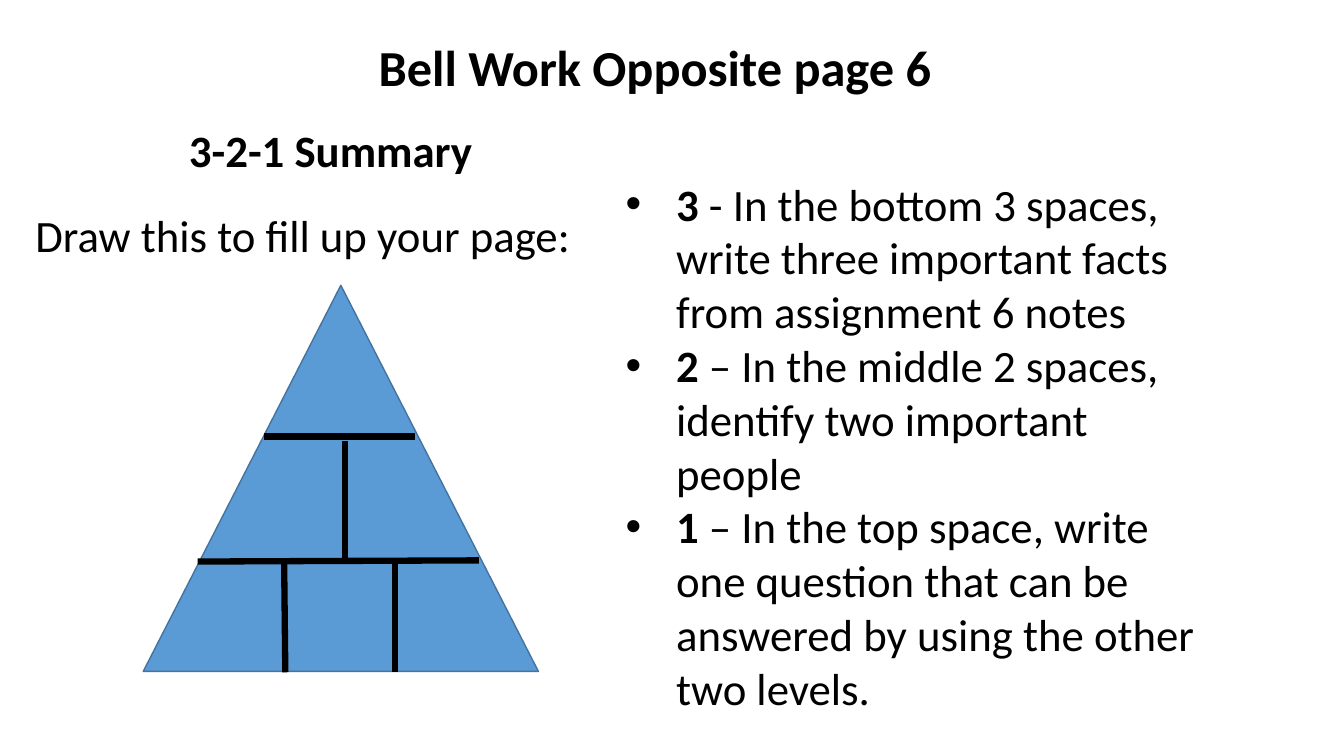
"""Build the Bell Work slide with its 3-2-1 summary pyramid."""
from dataclasses import dataclass

import pptx
import pptx.dml.color
import pptx.enum.shapes
import pptx.enum.text
import pptx.util
from lxml import etree
from pptx.oxml.ns import qn

Cm = pptx.util.Cm
Pt = pptx.util.Pt
Align = pptx.enum.text.PP_ALIGN
Anchor = pptx.enum.text.MSO_ANCHOR


@dataclass(frozen=True)
class Theme:
    """Colours, typeface and sizes of the slide."""
    font: str = "Calibri"
    ink: str = "000000"
    pyramid: str = "5B9BD5"
    outline: str = "43739E"
    title_size: int = 36
    body_size: int = 32
    outline_width: int = 1
    divider_width: float = 4.5


THEME = Theme()

TASKS = [
    ("3", " - In the bottom 3 spaces, write three important facts from assignment 6 notes"),
    ("2", " – In the middle 2 spaces, identify two important people"),
    ("1", " – In the top space, write one question that can be answered by using the other two levels."),
]

DIVIDERS = [
    (6.65, 11, 10.46, 11),
    (8.69, 11.1, 8.69, 14.17),
    (4.98, 14.15, 12.07, 14.12),
    (7.16, 14.12, 7.19, 16.94),
    (9.96, 14.12, 9.96, 16.94),
]


def rgb(value):
    """Turn a hex string into a colour."""
    return pptx.dml.color.RGBColor.from_string(value)


def add_text_frame(slide, left, top, width, height, anchor=Anchor.TOP):
    """Add a wrapping text box, in centimetres, and return its frame."""
    frame = slide.shapes.add_textbox(Cm(left), Cm(top), Cm(width), Cm(height)).text_frame
    frame.word_wrap = True
    frame.vertical_anchor = anchor
    return frame


def add_run(paragraph, text, size=THEME.body_size, bold=False):
    """Append a styled run to a paragraph."""
    run = paragraph.add_run()
    run.text = text
    run.font.name = THEME.font
    run.font.size = Pt(size)
    run.font.bold = bold
    run.font.color.rgb = rgb(THEME.ink)


def add_bullet(paragraph):
    """Give a paragraph a round bullet with a hanging indent."""
    properties = paragraph._p.get_or_add_pPr()
    properties.set("marL", str(Cm(1.27)))
    properties.set("indent", str(-Cm(1.27)))
    etree.SubElement(properties, qn("a:buFont"), typeface="Arial")
    etree.SubElement(properties, qn("a:buChar"), char="•")


def add_title(slide):
    """Add the centred heading."""
    heading = add_text_frame(slide, 3.81, 0.84, 25.4, 1.73, Anchor.BOTTOM).paragraphs[0]
    heading.alignment = Align.CENTER
    heading.line_spacing = 0.9
    add_run(heading, "Bell Work Opposite page 6", THEME.title_size, bold=True)


def add_instruction(slide):
    """Add the summary heading and the drawing instruction."""
    frame = add_text_frame(slide, 0.64, 2.97, 15.39, 4)
    summary = frame.paragraphs[0]
    summary.alignment = Align.CENTER
    add_run(summary, "3-2-1 Summary", bold=True)
    instruction = frame.add_paragraph()
    instruction.space_before = Pt(22)
    add_run(instruction, "Draw this to fill up your page:")


def add_tasks(slide):
    """Add the bulleted tasks, one for each pyramid level."""
    frame = add_text_frame(slide, 15.52, 4.32, 15.39, 14)
    for index, (count, task) in enumerate(TASKS):
        paragraph = frame.add_paragraph() if index else frame.paragraphs[0]
        add_bullet(paragraph)
        add_run(paragraph, count, bold=True)
        add_run(paragraph, task)


def add_pyramid(slide):
    """Add the triangle that holds the summary spaces."""
    pyramid = slide.shapes.add_shape(
        pptx.enum.shapes.MSO_SHAPE.ISOSCELES_TRIANGLE, Cm(3.61), Cm(7.19), Cm(9.96), Cm(9.73))
    pyramid.shadow.inherit = False
    pyramid.fill.solid()
    pyramid.fill.fore_color.rgb = rgb(THEME.pyramid)
    pyramid.line.color.rgb = rgb(THEME.outline)
    pyramid.line.width = Pt(THEME.outline_width)


def add_divider(slide, *ends):
    """Add a thick straight line between two points in centimetres."""
    divider = slide.shapes.add_connector(
        pptx.enum.shapes.MSO_CONNECTOR.STRAIGHT, *map(Cm, ends))
    divider.line.color.rgb = rgb(THEME.ink)
    divider.line.width = Pt(THEME.divider_width)
    etree.SubElement(divider._element.spPr, qn("a:effectLst"))


def main():
    """Build and save the slide."""
    deck = pptx.Presentation()
    deck.slide_width, deck.slide_height = Cm(33.87), Cm(19.05)
    slide = deck.slides.add_slide(deck.slide_layouts[6])
    add_title(slide)
    add_instruction(slide)
    add_tasks(slide)
    add_pyramid(slide)
    for ends in DIVIDERS:
        add_divider(slide, *ends)
    deck.save("out.pptx")


if __name__ == "__main__":
    main()
